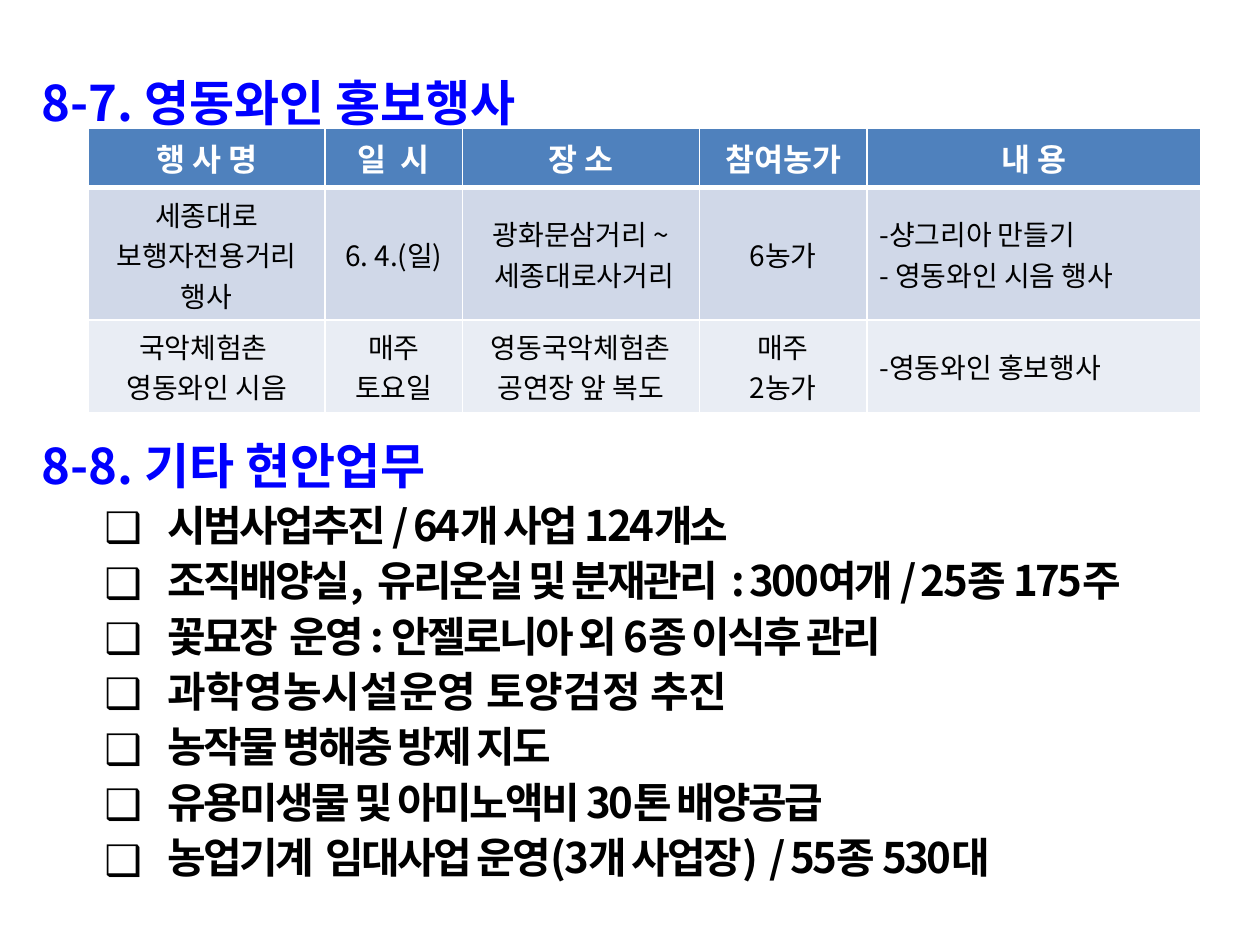
"""Build the slide on wine events and other current work."""
import dataclasses
import typing

import lxml.etree
import pptx
import pptx.dml.color
import pptx.enum.text
import pptx.oxml
import pptx.oxml.ns
import pptx.util

Inches = pptx.util.Inches
Align = pptx.enum.text.PP_ALIGN


@dataclasses.dataclass(frozen=True)
class Theme:
    font: str = "Noto Sans CJK KR"
    blue: str = "0000FF"
    black: str = "000000"
    white: str = "FFFFFF"
    head: str = "4F81BD"
    bands: tuple[str, str] = ("D0D8E8", "E9EDF4")
    title: int = 28
    item: int = 24
    label: int = 18
    body: int = 16


@dataclasses.dataclass(frozen=True)
class Style:
    size: int
    color: str
    bold: bool = True
    track: int = 0


@dataclasses.dataclass(frozen=True)
class Line:
    text: str
    style: Style
    left: float = 0
    hang: float = 0
    mark: str = ""
    level: int = 0
    space: float = 1
    align: typing.Any = Align.LEFT


@dataclasses.dataclass(frozen=True)
class Cell:
    lines: tuple[str, ...]
    align: typing.Any = Align.CENTER
    mark: str = ""
    hang: float = 0


THEME = Theme()
TITLE = Style(THEME.title, THEME.blue)
ITEM = Style(THEME.item, THEME.black, track=-150)
LOOSE = Style(THEME.item, THEME.black)
LABEL = Style(THEME.label, THEME.white)
BODY = Style(THEME.body, THEME.black, bold=False)

TASKS = (
    ("시범사업추진 / 64개 사업 124개소", ITEM),
    ("조직배양실,  유리온실 및 분재관리  : 300여개 / 25종 175주", ITEM),
    ("꽃묘장  운영 : 안젤로니아 외 6종 이식후 관리", ITEM),
    ("과학영농시설운영 토양검정 추진", LOOSE),
    ("농작물 병해충 방제 지도", ITEM),
    ("유용미생물 및 아미노액비 30톤 배양공급", ITEM),
    ("농업기계  임대사업 운영(3개 사업장)  / 55종 530대", ITEM),
)
HEADS = ("행 사 명", "일  시", "장 소", "참여농가", "내 용")
EVENTS = (
    (Cell(("세종대로 보행자전용거리 행사",)), Cell(("6. 4.(일)",)),
     Cell(("광화문삼거리 ~", " 세종대로사거리")), Cell(("6농가",)),
     Cell(("샹그리아 만들기", " 영동와인 시음 행사"), Align.LEFT, "-")),
    (Cell(("국악체험촌 ", "영동와인 시음")), Cell(("매주", "토요일")),
     Cell(("영동국악체험촌 공연장 앞 복도",)), Cell(("매주", "2농가")),
     Cell(("-영동와인 홍보행사",), Align.LEFT, hang=0.38)),
)
WIDTHS = (1.88, 1.09, 1.88, 1.33, 2.65)
HEIGHTS = (0.47, 1.05, 0.74)


def tint(code: str) -> pptx.dml.color.RGBColor:
    return pptx.dml.color.RGBColor.from_string(code)


def add_sub(node: typing.Any, tag: str, **attrs: str) -> typing.Any:
    return lxml.etree.SubElement(node, pptx.oxml.ns.qn(tag), attrs)


def add_line(para: typing.Any, line: Line) -> None:
    props = para._p.get_or_add_pPr()
    props.set("marL", str(Inches(line.left)))
    props.set("indent", str(Inches(-line.hang)))
    if line.mark:
        shade = add_sub(props, "a:buClr")
        add_sub(shade, "a:srgbClr", val=line.style.color)
        add_sub(props, "a:buFont", typeface=THEME.font)
        add_sub(props, "a:buChar", char=line.mark)
    para.level = line.level
    para.line_spacing = line.space
    para.alignment = line.align
    run = para.add_run()
    run.text = line.text
    run.font.size = pptx.util.Pt(line.style.size)
    run.font.bold = line.style.bold
    run.font.name = THEME.font
    run.font.color.rgb = tint(line.style.color)
    marks = run._r.get_or_add_rPr()
    marks.set("spc", str(line.style.track))
    marks.set("kern", "0")
    add_sub(marks, "a:ea", typeface=THEME.font)


def fill_frame(frame: typing.Any, lines: typing.Sequence[Line]) -> None:
    for index, line in enumerate(lines):
        para = frame.add_paragraph() if index else frame.paragraphs[0]
        add_line(para, line)


def add_text(slide: typing.Any, top: float, height: float,
             lines: typing.Sequence[Line]) -> None:
    box = slide.shapes.add_textbox(
        Inches(0.23), Inches(top), Inches(9.45), Inches(height))
    box.text_frame.word_wrap = False
    fill_frame(box.text_frame, lines)


def draw_cell(spot: typing.Any, cell: Cell, style: Style, fill: str,
              base: float = 1) -> None:
    props = spot._tc.get_or_add_tcPr()
    for side, width in (("L", 1), ("R", 1), ("T", 1), ("B", base)):
        edge = add_sub(props, f"a:ln{side}", w=str(pptx.util.Pt(width)))
        add_sub(add_sub(edge, "a:solidFill"), "a:srgbClr", val=THEME.white)
    spot.fill.solid()
    spot.fill.fore_color.rgb = tint(fill)
    spot.vertical_anchor = pptx.enum.text.MSO_ANCHOR.MIDDLE
    fill_frame(spot.text_frame, [
        Line(text, style, cell.hang, cell.hang, cell.mark, align=cell.align)
        for text in cell.lines])


def add_grid(slide: typing.Any) -> None:
    grid = slide.shapes.add_table(
        len(HEIGHTS), len(WIDTHS), Inches(0.7), Inches(1.02),
        Inches(sum(WIDTHS)), Inches(sum(HEIGHTS))).table
    for column, width in zip(grid.columns, WIDTHS):
        column.width = Inches(width)
    for row, height in zip(grid.rows, HEIGHTS):
        row.height = Inches(height)
    for col, head in enumerate(HEADS):
        draw_cell(grid.cell(0, col), Cell((head,)), LABEL, THEME.head, 3)
    for row, (event, band) in enumerate(zip(EVENTS, THEME.bands), 1):
        for col, cell in enumerate(event):
            draw_cell(grid.cell(row, col), cell, BODY, band)


def main() -> None:
    deck = pptx.Presentation()
    deck.slide_width, deck.slide_height = Inches(10), Inches(7.5)
    slide = deck.slides.add_slide(deck.slide_layouts[6])
    tasks = [Line(text, style, 1, 0.5, "❑", 1, 1.1) for text, style in TASKS]
    add_text(slide, 3.36, 3.67, [
        Line("8-8. 기타 현안업무", TITLE, 0.58, 0.58, space=1.1), *tasks])
    add_text(slide, 0.39, 0.63, [
        Line("8-7. 영동와인 홍보행사", TITLE, 0.58, 0.58, space=1.3)])
    add_grid(slide)
    deck.save("out.pptx")


if __name__ == "__main__":
    main()
